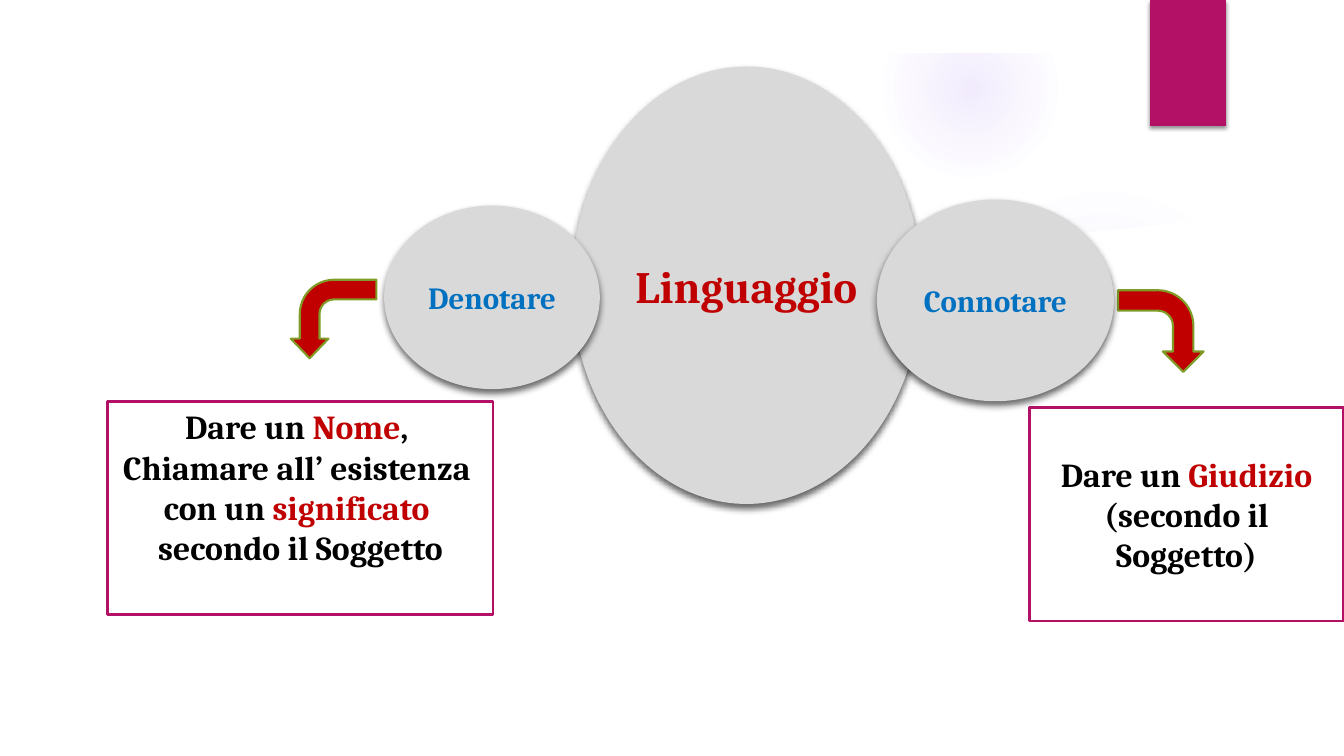
"""Build the Linguaggio slide: denoting and connoting around language."""
from dataclasses import dataclass
from typing import NamedTuple, Optional

from lxml import etree
from pptx import Presentation
from pptx import util as u
from pptx.dml.color import RGBColor
from pptx.enum import shapes, text
from pptx.oxml import ns

SLIDE_WIDTH, SLIDE_HEIGHT = u.Inches(13.333), u.Inches(7.5)


@dataclass(frozen=True)
class Theme:
    font: str = "Cambria"
    white: str = "FFFFFF"
    black: str = "000000"
    circle: str = "D9D9D9"
    magenta: str = "B31166"
    red: str = "C00000"
    blue: str = "0070C0"
    olive: str = "7F9D26"
    glow: str = "9B6BF2"
    heading: int = 32
    body: int = 24
    label: int = 22


THEME = Theme()


class Box(NamedTuple):
    left: float
    top: float
    width: float
    height: float


class Line(NamedTuple):
    color: str
    width: float


class Shadow(NamedTuple):
    opacity: int
    blur: float
    distance: float


class Run(NamedTuple):
    words: str
    color: str = THEME.black


class Glow(NamedTuple):
    box: Box
    stops: tuple[tuple[int, int], ...]


class Circle(NamedTuple):
    word: str
    box: Box
    size: int
    color: str


class Arrow(NamedTuple):
    box: Box
    rotation: int
    flipped: bool
    head: float


class Definition(NamedTuple):
    box: Box
    paragraphs: tuple[tuple[Run, ...], ...]
    anchor: text.MSO_ANCHOR
    wrap: bool


GLOWS = (
    Glow(Box(70.58, 24.4, 23.1, 41.07), ((0, 6), (36, 5), (69, 0), (100, 0))),
    Glow(Box(65.63, 0.13, 13.13, 23.33), ((0, 13), (36, 6), (73, 0), (100, 0))),
)
SWEEP = ((70.05, 33.33), (76.5, 33.07), (87, 30.93), (96.68, 28.53), (96.23, 22.13),
         (90.15, 25.47), (84.08, 28.13), (78.15, 30.27), (69.75, 32.4))
PANEL = ((3.75, 27.2), (3.75, 93.33), (96.25, 93.33), (96.25, 27.2), (90, 28.93),
         (83.7, 30.27), (77.4, 31.33), (71.18, 32.13), (53.1, 33.07), (18.68, 30.27))
ARROWS = (
    Arrow(Box(21.9, 36.53, 5.85, 11.33), 270, True, 0.24),
    Arrow(Box(83.33, 38.13, 6.08, 11.33), 90, False, 0.25),
)
CIRCLES = (
    Circle("Linguaggio", Box(42.53, 8.8, 26.03, 57.87), THEME.heading, THEME.red),
    Circle("Connotare", Box(65.25, 26.4, 17.63, 26.67), THEME.label, THEME.blue),
    Circle("Denotare", Box(28.58, 27.2, 16.05, 24.27), THEME.label, THEME.blue),
)
DEFINITIONS = (
    Definition(Box(8.03, 53.07, 28.65, 28.27), (
        (Run("Dare un "), Run("Nome", THEME.red), Run(", ")),
        (Run("Chiamare all’ esistenza "),),
        (Run("con un "), Run("significato ", THEME.red)),
        (Run("secondo il Soggetto"),),
    ), text.MSO_ANCHOR.TOP, False),
    Definition(Box(76.58, 53.87, 23.4, 28.27), (
        (Run("Dare un "), Run("Giudizio", THEME.red)),
        (Run("(secondo il Soggetto)"),),
    ), text.MSO_ANCHOR.MIDDLE, True),
)


def across(share: float) -> int:
    """Turn a percentage of the slide's width into a length."""
    return round(SLIDE_WIDTH * share / 100)


def down(share: float) -> int:
    """Turn a percentage of the slide's height into a length."""
    return round(SLIDE_HEIGHT * share / 100)


def add_child(parent, tag: str, **attributes):
    """Append a drawing element to its parent."""
    values = {name: str(value) for name, value in attributes.items()}
    return etree.SubElement(parent, ns.qn(tag), values)


def paint(shape, fill: str, line: Optional[Line] = None, shadow: Optional[Shadow] = None) -> None:
    """Set a shape's fill, outline and shadow."""
    shape.fill.solid()
    shape.fill.fore_color.rgb = RGBColor.from_string(fill)
    if line:
        shape.line.color.rgb = RGBColor.from_string(line.color)
        shape.line.width = u.Pt(line.width)
    else:
        shape.line.fill.background()
    shape.shadow.inherit = False
    if shadow:
        effects = shape._element.spPr.find(ns.qn("a:effectLst"))
        outer = add_child(effects, "a:outerShdw", blurRad=u.Pt(shadow.blur),
                          dist=u.Pt(shadow.distance), dir=90 * 60000, rotWithShape=0)
        color = add_child(outer, "a:srgbClr", val=THEME.black)
        add_child(color, "a:alpha", val=shadow.opacity * 1000)


def add_preset(slide, kind: shapes.MSO_SHAPE, box: Box, fill: str,
               line: Optional[Line] = None, shadow: Optional[Shadow] = None):
    """Add a painted preset shape."""
    shape = slide.shapes.add_shape(kind, across(box.left), down(box.top),
                                   across(box.width), down(box.height))
    paint(shape, fill, line, shadow)
    return shape


def add_glow(slide, glow: Glow) -> None:
    """Add a circle that fades out from its centre."""
    shape = add_preset(slide, shapes.MSO_SHAPE.OVAL, glow.box, THEME.glow)
    solid = shape._element.spPr.find(ns.qn("a:solidFill"))
    gradient = etree.Element(ns.qn("a:gradFill"))
    stops = add_child(gradient, "a:gsLst")
    for position, opacity in glow.stops:
        stop = add_child(stops, "a:gs", pos=position * 1000)
        color = add_child(stop, "a:srgbClr", val=THEME.glow)
        add_child(color, "a:alpha", val=opacity * 1000)
    center = add_child(gradient, "a:path", path="circle")
    add_child(center, "a:fillToRect", l=50000, t=50000, r=50000, b=50000)
    solid.getparent().replace(solid, gradient)


def add_outline(slide, points: tuple[tuple[float, float], ...], opacity: int = 100) -> None:
    """Add a white closed outline."""
    corners = [(across(x), down(y)) for x, y in points]
    builder = slide.shapes.build_freeform(*corners[0])
    builder.add_line_segments(corners[1:])
    shape = builder.convert_to_shape()
    paint(shape, THEME.white)
    if opacity < 100:
        color = shape._element.spPr.find(ns.qn("a:solidFill"))[0]
        add_child(color, "a:alpha", val=opacity * 1000)


def add_arrow(slide, arrow: Arrow) -> None:
    """Add a bent arrow pointing down to a definition."""
    shape = add_preset(slide, shapes.MSO_SHAPE.BENT_ARROW, arrow.box, THEME.red, Line(THEME.olive, 1.5))
    shape.rotation = arrow.rotation
    shape.adjustments[1] = arrow.head
    if arrow.flipped:
        shape._element.spPr.find(ns.qn("a:xfrm")).set("flipH", "1")


def write(shape, paragraphs: tuple[tuple[Run, ...], ...], size: int,
          anchor: text.MSO_ANCHOR, wrap: bool) -> None:
    """Write centred bold paragraphs in a shape."""
    frame = shape.text_frame
    frame.word_wrap = wrap
    frame.vertical_anchor = anchor
    for index, runs in enumerate(paragraphs):
        paragraph = frame.add_paragraph() if index else frame.paragraphs[0]
        paragraph.alignment = text.PP_ALIGN.CENTER
        paragraph.font.name, paragraph.font.size, paragraph.font.bold = THEME.font, u.Pt(size), True
        for words, color in runs:
            run = paragraph.add_run()
            run.text = words
            run.font.color.rgb = RGBColor.from_string(color)


def main() -> None:
    """Build and save the slide."""
    presentation = Presentation()
    presentation.slide_width, presentation.slide_height = SLIDE_WIDTH, SLIDE_HEIGHT
    slide = presentation.slides.add_slide(presentation.slide_layouts.get_by_name("Blank"))
    for glow in GLOWS:
        add_glow(slide, glow)
    add_outline(slide, SWEEP, opacity=20)
    add_outline(slide, PANEL)
    border = add_preset(slide, shapes.MSO_SHAPE.FRAME, Box(0, 0, 100, 100), THEME.white)
    border.adjustments[0] = 0.07
    add_preset(slide, shapes.MSO_SHAPE.RECTANGLE, Box(85.58, 0, 5.63, 16.67), THEME.magenta,
               shadow=Shadow(44, 3, 2))
    for arrow in ARROWS:
        add_arrow(slide, arrow)
    for word, box, size, color in CIRCLES:
        shape = add_preset(slide, shapes.MSO_SHAPE.OVAL, box, THEME.circle, shadow=Shadow(60, 5, 3))
        write(shape, ((Run(word, color),),), size, text.MSO_ANCHOR.MIDDLE, False)
    for box, paragraphs, anchor, wrap in DEFINITIONS:
        shape = add_preset(slide, shapes.MSO_SHAPE.RECTANGLE, box, THEME.white, Line(THEME.magenta, 2))
        write(shape, paragraphs, THEME.body, anchor, wrap)
    presentation.save("out.pptx")


if __name__ == "__main__":
    main()
